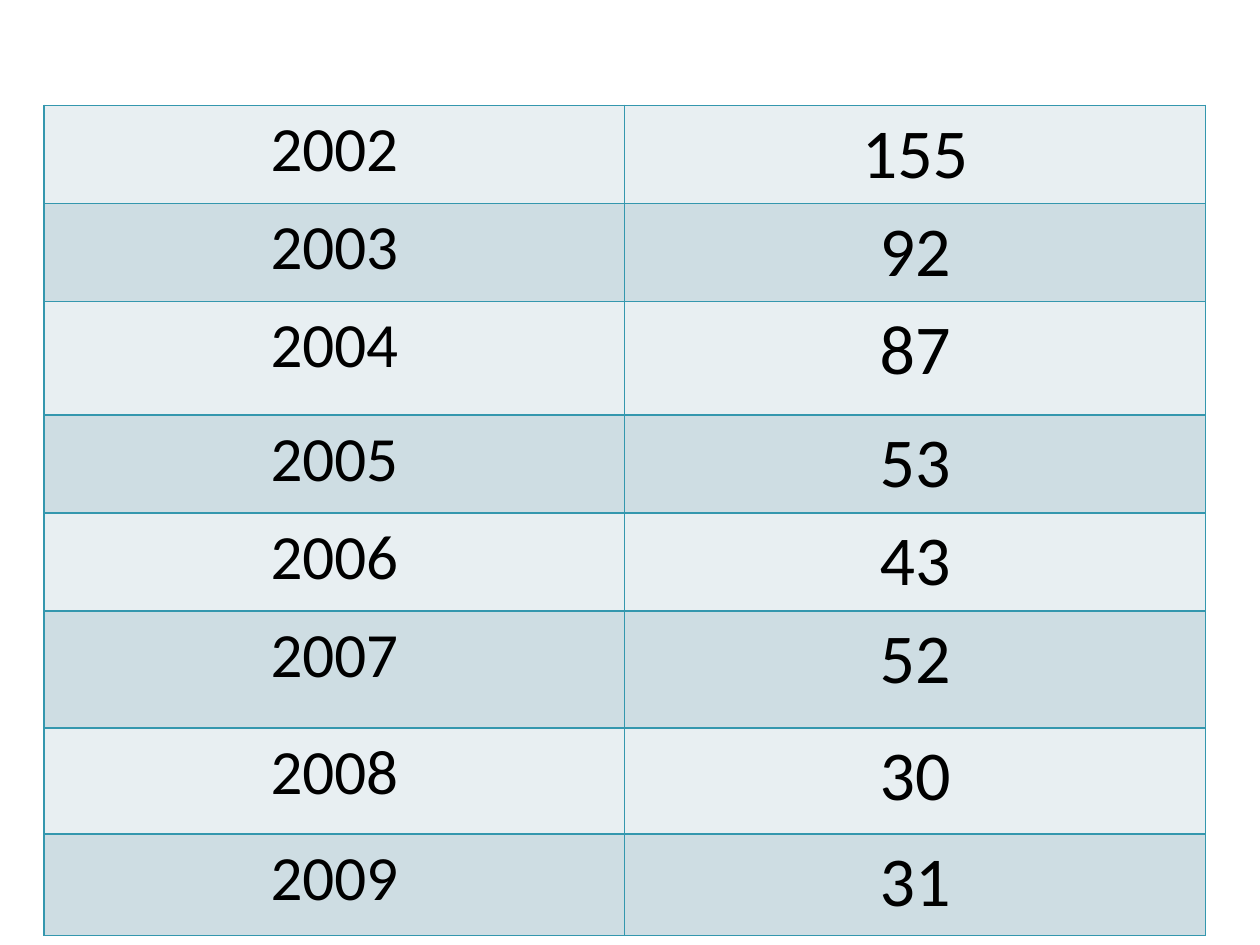
from dataclasses import dataclass

from lxml.etree import SubElement
from pptx import Presentation
from pptx.dml.color import RGBColor
from pptx.enum.text import PP_ALIGN
from pptx.oxml.ns import qn
from pptx.table import Table, _Cell
from pptx.util import Pt

HUES = {"text": "000000", "light": "E8EFF2", "dark": "CEDDE3", "edge": "3497AE"}
FONT = {"name": "Calibri", "bold": False}
SIZES = (Pt(36), Pt(40))
EDGES = ("a:lnL", "a:lnR", "a:lnT", "a:lnB")


@dataclass
class Entry:
    year: str
    count: str
    height: float


ROWS = [
    Entry("2002", "155", 56),
    Entry("2003", "92", 55),
    Entry("2004", "87", 65),
    Entry("2005", "53", 55),
    Entry("2006", "43", 55),
    Entry("2007", "52", 67),
    Entry("2008", "30", 60.5),
    Entry("2009", "31", 58),
]


def draw_edges(cell: _Cell) -> None:
    props = cell._tc.get_or_add_tcPr()
    for pos, tag in enumerate(EDGES):
        line = SubElement(props, qn(tag), w=str(Pt(1)))
        fill = SubElement(line, qn("a:solidFill"))
        SubElement(fill, qn("a:srgbClr"), val=HUES["edge"])
        props.remove(line)
        props.insert(pos, line)


def fill_cell(cell: _Cell, text: str, size: Pt, hue: str) -> None:
    cell.fill.solid()
    cell.fill.fore_color.rgb = RGBColor.from_string(HUES[hue])
    draw_edges(cell)
    para = cell.text_frame.paragraphs[0]
    para.alignment = PP_ALIGN.CENTER
    run = para.add_run()
    run.text = text
    for key, value in {**FONT, "size": size}.items():
        setattr(run.font, key, value)
    run.font.color.rgb = RGBColor.from_string(HUES["text"])


def fill_table(table: Table, rows: list[Entry]) -> None:
    for key in ("first_row", "horz_banding"):
        setattr(table, key, False)
    for num, entry in enumerate(rows):
        table.rows[num].height = Pt(entry.height)
        hue = "dark" if num % 2 else "light"
        for col, text in enumerate((entry.year, entry.count)):
            fill_cell(table.cell(num, col), text, SIZES[col], hue)


def main() -> None:
    deck = Presentation()
    deck.slide_width, deck.slide_height = Pt(720), Pt(540)
    slide = deck.slides.add_slide(deck.slide_layouts[6])
    height = sum(entry.height for entry in ROWS)
    frame = slide.shapes.add_table(
        len(ROWS), len(SIZES), Pt(25.2), Pt(60.2), Pt(663.6), Pt(height)
    )
    fill_table(frame.table, ROWS)
    deck.save("out.pptx")


if __name__ == "__main__":
    main()
